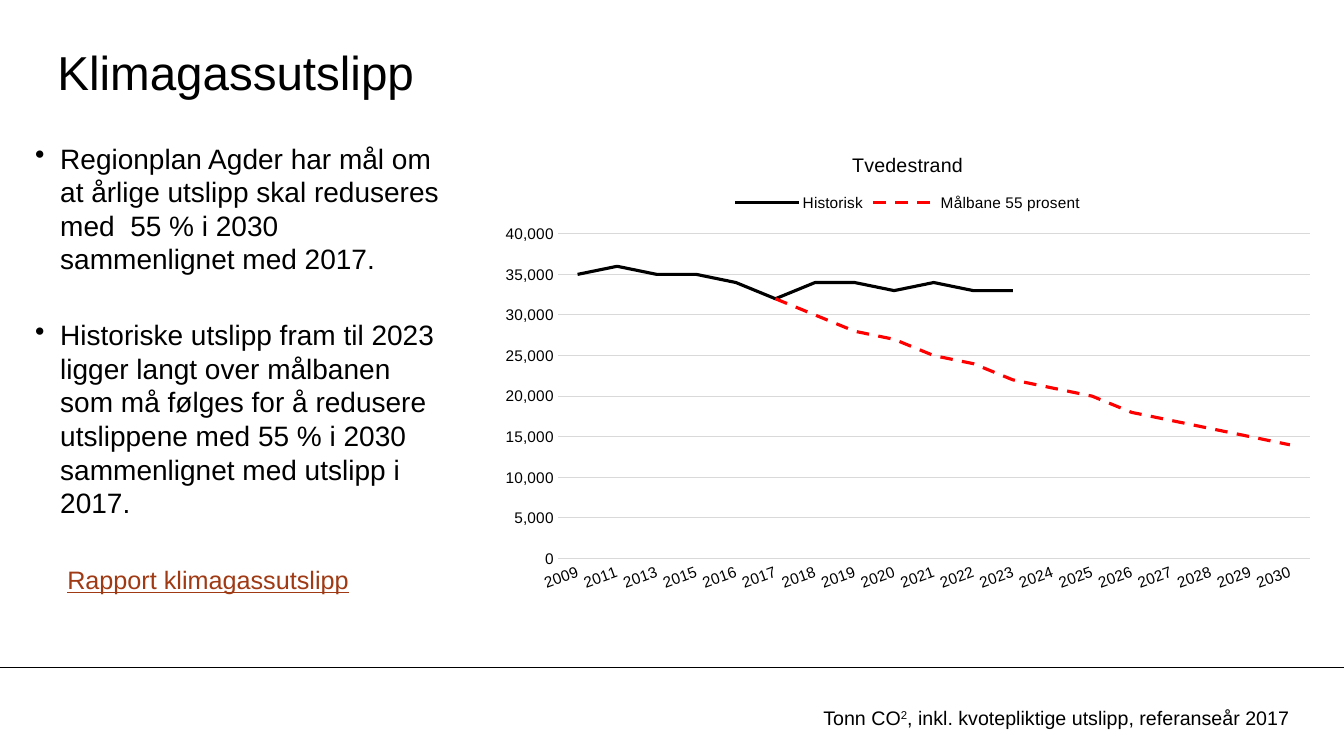
import pptx
import pptx.chart.data
import pptx.dml.color
import pptx.enum.chart
import pptx.enum.dml
import pptx.enum.shapes
import pptx.enum.text
import pptx.oxml
import pptx.oxml.ns
import pptx.util
from dataclasses import dataclass

Pt = pptx.util.Pt
qn = pptx.oxml.ns.qn


@dataclass(frozen=True)
class Theme:
    font: str = "Arial"
    ink: str = "000000"
    link: str = "9F3A14"
    target: str = "FF0000"
    grid: str = "D9D9D9"
    title: int = 34
    body: int = 20
    link_size: int = 18
    note: int = 14
    chart_title: int = 14
    label: int = 11


def rgb(value):
    return pptx.dml.color.RGBColor.from_string(value)


class SlideBuilder:
    def __init__(self, slide, theme):
        self.s = slide
        self.theme = theme

    def style_font(self, font, size, color=None, **extra):
        values = {"name": self.theme.font, "size": Pt(size), "bold": False, **extra}
        for key, value in values.items():
            setattr(font, key, value)
        font.color.rgb = rgb(color or self.theme.ink)

    def style_line(self, line, color, width, dash=None):
        line.color.rgb = rgb(color)
        line.width = Pt(width)
        if dash:
            line.dash_style = dash

    def text_box(self, box, inset=(0, 0), anchor=pptx.enum.text.MSO_ANCHOR.TOP):
        tf = self.s.shapes.add_textbox(*map(Pt, box)).text_frame
        side, top = map(Pt, inset)
        values = {"word_wrap": True, "vertical_anchor": anchor,
                  "margin_left": side, "margin_right": side,
                  "margin_top": top, "margin_bottom": top}
        for key, value in values.items():
            setattr(tf, key, value)
        return tf

    def text(self, box, runs, size, color=None, underline=None, **frame):
        p = self.text_box(box, **frame).paragraphs[0]
        for words, baseline in runs:
            r = p.add_run()
            r.text = words
            self.style_font(r.font, size, color, underline=underline)
            if baseline:
                r.font._element.set("baseline", str(baseline * 1000))

    def bullets(self, box, items, size, indent, gap):
        tf = self.text_box(box)
        for i, words in enumerate(items):
            p = tf.paragraphs[0] if i == 0 else tf.add_paragraph()
            if i:
                p.space_before = Pt(gap)
            pPr = p._p.get_or_add_pPr()
            pPr.set("marL", str(Pt(indent)))
            pPr.set("indent", str(-Pt(indent)))
            bullet = pptx.oxml.parse_xml(
                '<a:buChar xmlns:a="http://schemas.openxmlformats.org/drawingml/2006/main" char="•"/>')
            pPr.append(bullet)
            r = p.add_run()
            r.text = words
            self.style_font(r.font, size)

    def rule(self, start, end, width):
        sp = self.s.shapes.add_connector(
            pptx.enum.shapes.MSO_CONNECTOR.STRAIGHT, *map(Pt, start + end))
        self.style_line(sp.line, self.theme.ink, width)
        sp._element.spPr.append(pptx.oxml.parse_xml(
            '<a:effectLst xmlns:a="http://schemas.openxmlformats.org/drawingml/2006/main"/>'))

    def line_chart(self, box, title, years, series):
        t = self.theme
        data = pptx.chart.data.CategoryChartData(number_format="#,##0")
        data.categories = years
        for name, values, _, _ in series:
            data.add_series(name, values)
        chart = self.s.shapes.add_chart(
            pptx.enum.chart.XL_CHART_TYPE.LINE, *map(Pt, box), data).chart
        self.style_font(chart.font, t.label)

        # Title and legend
        chart.has_title = True
        p = chart.chart_title.text_frame.paragraphs[0]
        r = p.add_run()
        r.text = title
        self.style_font(r.font, t.chart_title)
        chart.chart_title.include_in_layout = False
        chart.has_legend = True
        chart.legend.position = pptx.enum.chart.XL_LEGEND_POSITION.TOP
        chart.legend.include_in_layout = False
        self.style_font(chart.legend.font, t.label)

        # Axes
        axes = (chart.category_axis, "0"), (chart.value_axis, "#,##0")
        for axis, number_format in axes:
            axis.major_tick_mark = pptx.enum.chart.XL_TICK_MARK.NONE
            axis.minor_tick_mark = pptx.enum.chart.XL_TICK_MARK.NONE
            axis.tick_labels.number_format = number_format
            axis.tick_labels.number_format_is_linked = False
            self.style_font(axis.tick_labels.font, t.label)
        years_axis, tonnes_axis = chart.category_axis, chart.value_axis
        self.style_line(years_axis.format.line, t.grid, 0.75)
        years_axis._element.find(qn("c:txPr")).find(qn("a:bodyPr")).set("rot", "-1200000")
        tonnes_axis.minimum_scale, tonnes_axis.maximum_scale = 0, 40000
        tonnes_axis.major_unit = 5000
        tonnes_axis.format.line.fill.background()
        tonnes_axis.has_major_gridlines = True
        self.style_line(tonnes_axis.major_gridlines.format.line, t.grid, 0.75)

        # Series
        plot = chart.plots[0]
        plot.vary_by_categories = False
        for line, (_, _, color, dash) in zip(plot.series, series):
            line.smooth = False
            line.marker.style = pptx.enum.chart.XL_MARKER_STYLE.NONE
            self.style_line(line.format.line, color, 2.25, dash)


def main():
    theme = Theme()
    prs = pptx.Presentation()
    prs.slide_width, prs.slide_height = Pt(960), Pt(540)
    b = SlideBuilder(prs.slides.add_slide(prs.slide_layouts[6]), theme)

    # Footer rule and title
    b.rule((0, 476.6), (960, 476.6), 0.75)
    b.text((41, 24, 799, 54), [("Klimagassutslipp", 0)], theme.title,
           anchor=pptx.enum.text.MSO_ANCHOR.MIDDLE)

    # Main points
    b.bullets((25, 100.8, 294.5, 278), [
        "Regionplan Agder har mål om at årlige utslipp skal reduseres med  55 % i 2030 "
        "sammenlignet med 2017.",
        "Historiske utslipp fram til 2023 ligger langt over målbanen som må følges for å "
        "redusere utslippene med 55 % i 2030 sammenlignet med utslipp i 2017.",
    ], theme.body, indent=18, gap=30)

    # Unit note and report reference
    inset = (7.2, 3.6)
    b.text((581, 500.4, 366.5, 24.5),
           [("Tonn CO", 0), ("2", 30), (", inkl. kvotepliktige utslipp, referanseår 2017", 0)],
           theme.note, inset=inset)
    b.text((41, 399.6, 227.5, 29), [("Rapport klimagassutslipp", 0)],
           theme.link_size, theme.link, underline=True, inset=inset)

    # Emissions chart: the target falls by 55 % from 2017 to 2030 at a constant rate
    years = [2009, 2011, 2013, *range(2015, 2031)]
    history = [35000, 36000, 35000, 35000, 34000, 32000,
               34000, 34000, 33000, 34000, 33000, 33000]
    history += [None] * (len(years) - len(history))
    target = [None if year < 2017 else round(32000 * 0.45 ** ((year - 2017) / 13), -3)
              for year in years]
    b.line_chart((349.2, 95.6, 598.3, 333.4), "Tvedestrand", [str(year) for year in years], [
        ("Historisk", history, theme.ink, None),
        ("Målbane 55 prosent", target, theme.target, pptx.enum.dml.MSO_LINE.DASH),
    ])

    prs.save("out.pptx")


if __name__ == "__main__":
    main()
